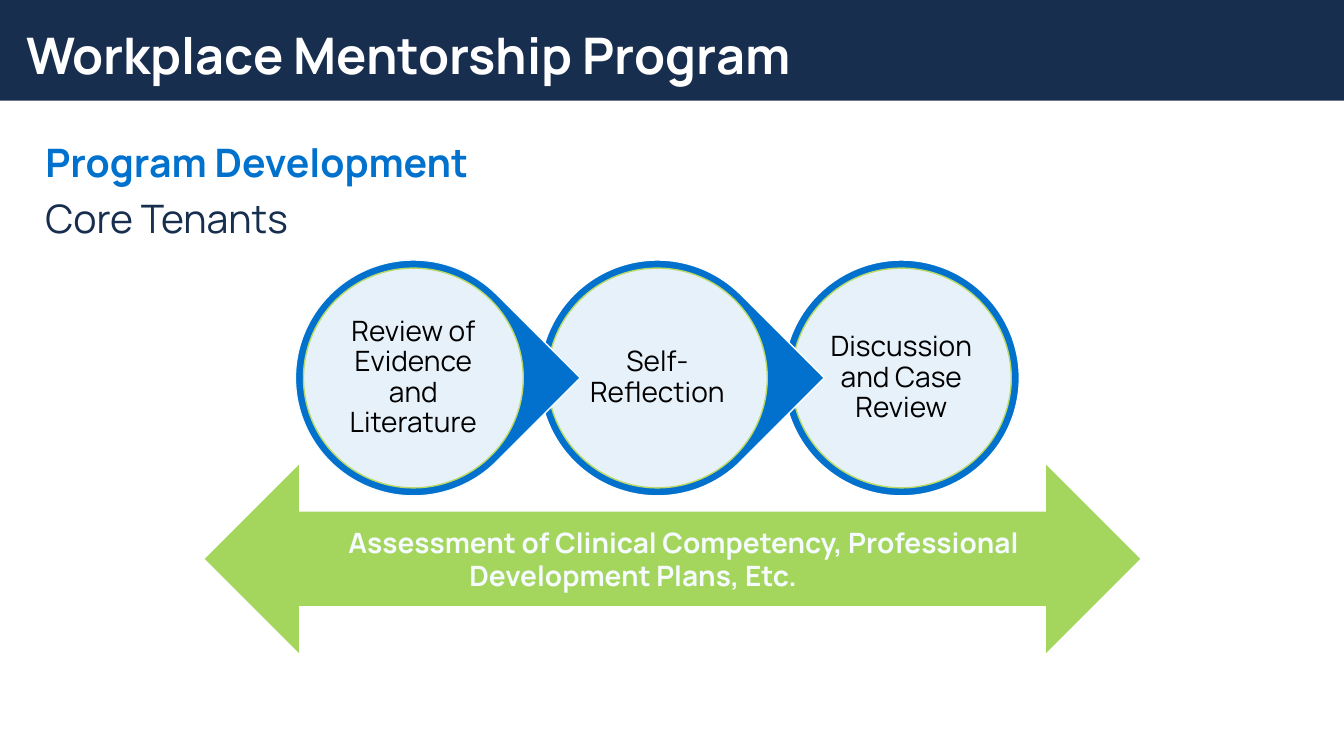
"""Build the mentorship slide: three linked steps above a wide arrow."""
from dataclasses import dataclass

from lxml.etree import SubElement
from pptx import Presentation
from pptx.dml.color import RGBColor
from pptx.enum.shapes import MSO_SHAPE
from pptx.enum.text import MSO_ANCHOR, MSO_AUTO_SIZE, PP_ALIGN
from pptx.oxml.ns import qn
from pptx.shapes.autoshape import Shape
from pptx.slide import Slide
from pptx.text.text import TextFrame
from pptx.util import Inches, Pt


@dataclass(frozen=True)
class Theme:
    font: str = "Manrope"
    navy: str = "182E4F"
    blue: str = "0072CE"
    ring: str = "0171CD"
    green: str = "A4D65E"
    lime: str = "B9D966"
    white: str = "FFFFFF"
    pale: str = "F6FBFF"
    black: str = "000000"
    title: int = 36
    head: int = 28
    body: int = 20


@dataclass(frozen=True)
class Box:
    left: float
    top: float
    width: float
    height: float

    def inset(self, gap: float) -> "Box":
        return Box(self.left + gap, self.top + gap,
                   self.width - 2 * gap, self.height - 2 * gap)

    def lengths(self) -> tuple:
        return tuple(Inches(n) for n in (self.left, self.top, self.width, self.height))


@dataclass(frozen=True)
class Step:
    text: str
    kind: MSO_SHAPE
    edge: str


THEME = Theme()
STEPS = (
    Step("Review of Evidence and Literature", MSO_SHAPE.TEAR, THEME.pale),
    Step("Self-Reflection", MSO_SHAPE.TEAR, THEME.white),
    Step("Discussion and Case Review", MSO_SHAPE.OVAL, THEME.white),
)
FIRST = Box(2.93, 2.58, 2.34, 2.34)
PITCH = 2.42


def place(shape: Shape, box: Box) -> None:
    shape.left, shape.top, shape.width, shape.height = box.lengths()


def write(frame: TextFrame, text: str, *, size: int, color: str, bold: bool = False,
          align: PP_ALIGN = PP_ALIGN.CENTER, anchor: MSO_ANCHOR = MSO_ANCHOR.TOP,
          space: float = 0.9, before: int = 0, indent: float = 0,
          pad: float | None = None, more: bool = False) -> None:
    frame.word_wrap = True
    frame.auto_size = MSO_AUTO_SIZE.NONE
    frame.vertical_anchor = anchor
    if pad is not None:
        frame.margin_left = frame.margin_right = Inches(pad)
        frame.margin_top = frame.margin_bottom = Inches(pad)
    para = frame.add_paragraph() if more else frame.paragraphs[0]
    props = para._p.get_or_add_pPr()
    props.set("marL", "0")
    props.set("indent", str(Inches(indent)))
    SubElement(props, qn("a:buNone"))
    para.alignment = align
    para.line_spacing = space
    para.space_before = Pt(before)
    para.space_after = Pt(0)
    run = para.add_run()
    run.text = text
    run.font.name = THEME.font
    run.font.size = Pt(size)
    run.font.bold = bold
    run.font.color.rgb = RGBColor.from_string(color)


def draw(slide: Slide, kind: MSO_SHAPE, box: Box, fill: str,
         edge: str | None = None, alpha: int = 100) -> Shape:
    shape = slide.shapes.add_shape(kind, *box.lengths())
    shape.shadow.inherit = False
    shape.fill.solid()
    shape.fill.fore_color.rgb = RGBColor.from_string(fill)
    if alpha < 100:
        tint = shape.fill._xPr.find(qn("a:solidFill"))[0]
        SubElement(tint, qn("a:alpha")).set("val", str(alpha * 1000))
    if edge:
        shape.line.color.rgb = RGBColor.from_string(edge)
        shape.line.width = Pt(1)
    else:
        shape.line.fill.background()
    return shape


def add_step(slide: Slide, step: Step, box: Box) -> None:
    outer = draw(slide, step.kind, box, THEME.ring, step.edge)
    if step.kind == MSO_SHAPE.TEAR:
        outer.rotation = 45
        outer.adjustments[0] = 1
    draw(slide, MSO_SHAPE.OVAL, box.inset(0.08), THEME.white, THEME.lime, alpha=90)
    label = slide.shapes.add_textbox(*box.inset(0.39).lengths())
    write(label.text_frame, step.text, size=THEME.body, color=THEME.black,
          anchor=MSO_ANCHOR.MIDDLE, pad=0.03)


def add_heads(slide: Slide) -> None:
    title, body = slide.placeholders
    band = draw(slide, MSO_SHAPE.RECTANGLE, Box(0, 0, 13.33, 1), THEME.navy)
    title.element.addprevious(band.element)
    place(title, Box(0.16, 0.15, 11.5, 0.85))
    write(title.text_frame, "Workplace Mentorship Program", size=THEME.title,
          color=THEME.white, bold=True, align=PP_ALIGN.LEFT, anchor=MSO_ANCHOR.MIDDLE)
    place(body, Box(0.35, 1.37, 7.59, 5.4))
    write(body.text_frame, "Program Development", size=THEME.head,
          color=THEME.blue, bold=True, align=PP_ALIGN.LEFT)
    write(body.text_frame, "Core Tenants", size=THEME.head, color=THEME.navy,
          align=PP_ALIGN.LEFT, before=10, more=True)


def add_arrow(slide: Slide) -> None:
    draw(slide, MSO_SHAPE.LEFT_RIGHT_ARROW, Box(2.03, 4.61, 9.28, 1.87), THEME.green)
    label = slide.shapes.add_textbox(*Box(2.22, 5.16, 8.12, 0.77).lengths())
    write(label.text_frame,
          "Assessment of Clinical Competency, Professional Development Plans, Etc.",
          size=THEME.body, color=THEME.pale, bold=True, space=1.0, indent=1)


def main() -> None:
    deck = Presentation()
    deck.slide_width, deck.slide_height = Inches(13.33), Inches(7.5)
    slide = deck.slides.add_slide(deck.slide_layouts[1])
    add_heads(slide)
    for col, step in reversed(list(enumerate(STEPS))):
        left = FIRST.left + col * PITCH
        add_step(slide, step, Box(left, FIRST.top, FIRST.width, FIRST.height))
    add_arrow(slide)
    deck.save("out.pptx")


if __name__ == "__main__":
    main()
